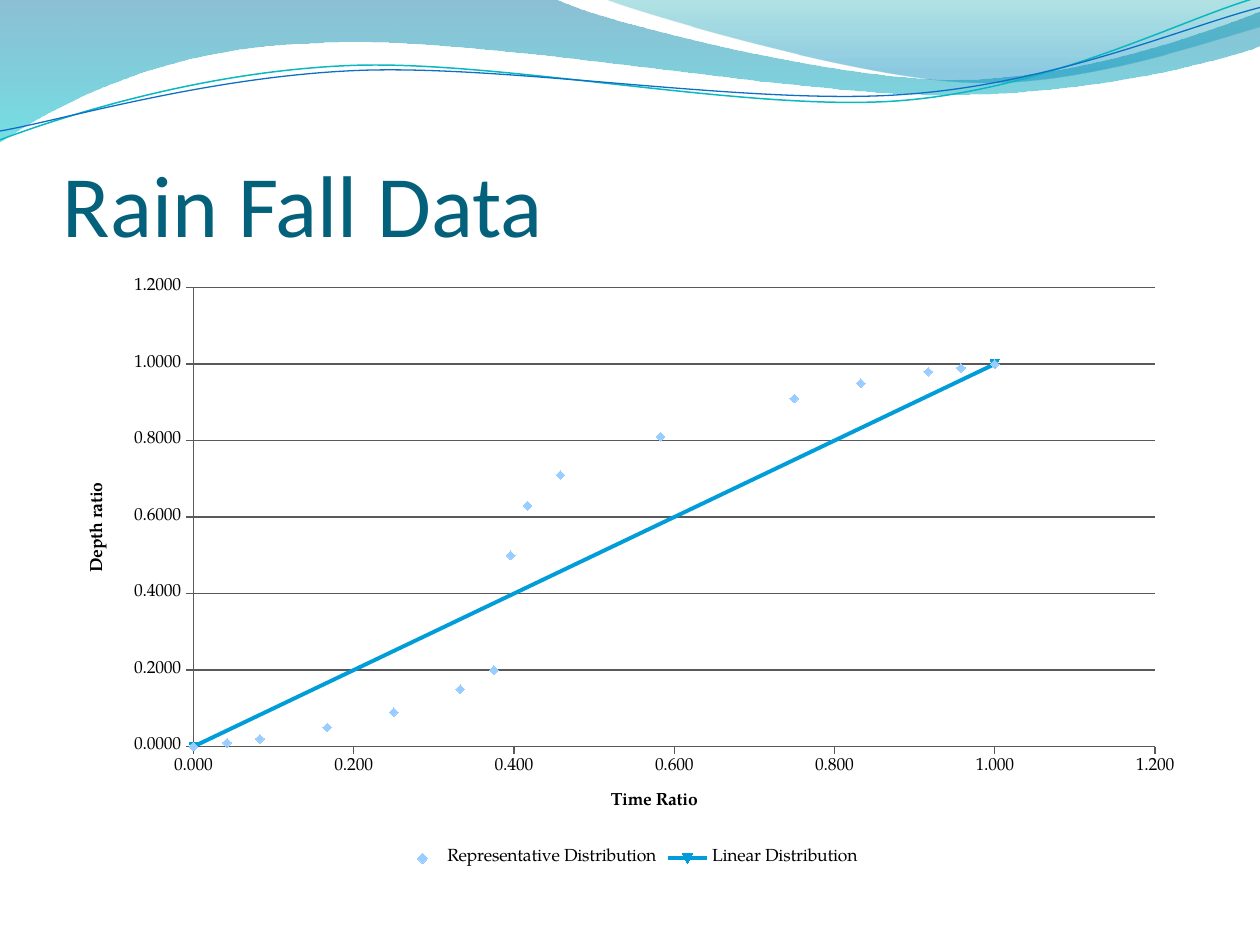
from math import cos, radians, sin

from lxml import etree
from pptx import Presentation
from pptx.chart.data import XyChartData
from pptx.dml.color import RGBColor
from pptx.enum.chart import XL_CHART_TYPE, XL_LEGEND_POSITION, XL_MARKER_STYLE, XL_TICK_MARK
from pptx.enum.text import MSO_ANCHOR
from pptx.oxml.ns import qn
from pptx.util import Inches, Pt

SCATTER = XL_CHART_TYPE.XY_SCATTER
LEGEND_BOTTOM = XL_LEGEND_POSITION.BOTTOM
DIAMOND, AUTOMATIC = XL_MARKER_STYLE.DIAMOND, XL_MARKER_STYLE.AUTOMATIC
TICK_OUTSIDE = XL_TICK_MARK.OUTSIDE
ANCHOR_BOTTOM = MSO_ANCHOR.BOTTOM
CHART_FONT = "TeX Gyre Pagella"
RIPPLE_TILT = 2.7


def rgb(hex_color):
    return RGBColor.from_string(hex_color)


def draw_outline(start, segments, close):
    """Draw segments of one point (line) or three points (cubic Bezier), in inches."""
    builder = slide.shapes.build_freeform(Inches(start[0]), Inches(start[1]))
    builder.add_line_segments(
        [(Inches(x), Inches(y)) for segment in segments for x, y in segment], close=close)
    outline = builder.convert_to_shape()
    outline.shadow.inherit = False
    # Join each run of three straight steps into one curve
    steps = iter(list(outline._element.iter(qn("a:lnTo"))))
    for segment in segments:
        parts = [next(steps) for _ in segment]
        if len(parts) == 3:
            curve = etree.Element(qn("a:cubicBezTo"))
            parts[0].addprevious(curve)
            for part in parts:
                curve.append(part[0])
                part.getparent().remove(part)
    return outline


prs = Presentation()
prs.slide_width, prs.slide_height = Inches(10), Inches(7.5)
slide = prs.slides.add_slide(prs.slide_layouts[6])

# Translucent waves: start, segments, gradient stops (position, colour, opacity %)
waves = [
    ((0, 0), [
        [(4.4, -0.01)],
        [(4.76, 0.17), (6.64, 0.63), (7.58, 0.63)],
        [(8.53, 0.63), (9.58, 0.26), (10, 0.09)],
        [(10.01, 0.36)],
        [(9.83, 0.44), (8.7, 0.76), (7.46, 0.75)],
        [(6.22, 0.75), (3.82, 0.28), (2.57, 0.34)],
        [(1.29, 0.36), (0.46, 0.83), (-0.01, 1.13)],
        [(0, 0)],
    ], [(0, "0074A1", 45), (1, "00C6CF", 55)]),
    ((4.79, -0.01), [
        [(5.09, 0.11), (6.82, 0.62), (7.69, 0.65)],
        [(8.56, 0.69), (9.61, 0.32), (10, 0.21)],
        [(10, 0)],
        [(4.79, -0.01)],
    ], [(0, "00A1A9", 30), (0.8, "008BBF", 45)]),
]
for start, segments, stops in waves:
    wave = draw_outline(start, segments, close=True)
    wave.line.fill.background()
    wave.fill.gradient()
    wave.fill.gradient_angle = 270
    for stop, (position, color, _) in zip(wave.fill.gradient_stops, stops):
        stop.position = position
        stop.color.rgb = rgb(color)
    color_nodes = wave._element.spPr.find(qn("a:gradFill")).iter(qn("a:srgbClr"))
    for node, (_, _, opacity) in zip(color_nodes, stops):
        etree.SubElement(node, qn("a:alpha"), val=str(opacity * 1000))

# Tilted thin lines: centre, start, segments, colour, width
ripples = [
    ((4.99, 0.57), (0, 1.11), [
        [(0.48, 0.93), (1.58, 0.57), (2.77, 0.52)],
        [(3.95, 0.47), (5.93, 0.89), (7.13, 0.8)],
        [(8.33, 0.71), (9.38, 0.15), (9.98, -0.02)],
    ], "0AB8BF", 0.85),
    ((5, 0.59), (0, 1.04), [
        [(0.47, 0.96), (1.64, 0.61), (2.83, 0.56)],
        [(4.03, 0.51), (5.97, 0.84), (7.17, 0.75)],
        [(8.36, 0.67), (9.41, 0.21), (10, 0.06)],
    ], "0F6FC6", 0.75),
]
cosine, sine = cos(radians(RIPPLE_TILT)), sin(radians(RIPPLE_TILT))
for (center_x, center_y), start, segments, color, width in ripples:
    level_start, *level_segments = [
        [(center_x + (x - center_x) * cosine - (y - center_y) * sine,
          center_y + (x - center_x) * sine + (y - center_y) * cosine) for x, y in segment]
        for segment in [[start], *segments]]
    ripple = draw_outline(level_start[0], level_segments, close=False)
    ripple.rotation = 360 - RIPPLE_TILT
    ripple.fill.background()
    ripple.line.color.rgb = rgb(color)
    ripple.line.width = Pt(width)

heading = slide.shapes.add_textbox(Inches(0.5), Inches(0.77), Inches(9), Inches(1.25)).text_frame
heading_format = {
    "word_wrap": True, "vertical_anchor": ANCHOR_BOTTOM, "margin_left": 0,
    "margin_right": 0, "margin_top": Inches(0.05), "margin_bottom": 0,
}
for attribute, value in heading_format.items():
    setattr(heading, attribute, value)
heading_run = heading.paragraphs[0].add_run()
heading_run.text = "Rain Fall Data"
heading_run.font.name = "Calibri"
heading_run.font.size = Pt(50)
heading_run.font.color.rgb = rgb("04617B")

hours = [0, 1, 2, 4, 6, 8, 9, 9.5, 10, 11, 14, 18, 20, 22, 23, 24]
time_ratios = [round(hour / 24, 3) for hour in hours]
depth_ratios = [0, 0.01, 0.02, 0.05, 0.09, 0.15, 0.2, 0.5,
                0.63, 0.71, 0.81, 0.91, 0.95, 0.98, 0.99, 1]
rainfall = XyChartData()
for name, points in (
    ("Representative Distribution", zip(time_ratios, depth_ratios)),
    ("Linear Distribution", [(0, 0), (1, 1)]),
):
    distribution = rainfall.add_series(name)
    for time_ratio, depth_ratio in points:
        distribution.add_data_point(time_ratio, depth_ratio)

chart = slide.shapes.add_chart(
    SCATTER, Inches(0.5), Inches(2.12), Inches(9), Inches(4.8), rainfall).chart
chart.has_title = False
chart.font.name = CHART_FONT
chart.font.size = Pt(10)
chart.font.color.rgb = rgb("000000")
chart.has_legend = True
chart.legend.position = LEGEND_BOTTOM
chart.legend.include_in_layout = False
chart.plots[0].vary_by_categories = False

for axis, title, number_format in (
    (chart.category_axis, "Time Ratio", "0.000"),
    (chart.value_axis, "Depth ratio", "0.0000"),
):
    axis.minimum_scale, axis.maximum_scale, axis.major_unit = 0, 1.2, 0.2
    axis.major_tick_mark = TICK_OUTSIDE
    axis.has_major_gridlines = axis is chart.value_axis
    axis.tick_labels.number_format = number_format
    axis.tick_labels.number_format_is_linked = False
    axis.format.line.color.rgb = rgb("595959")
    title_run = axis.axis_title.text_frame.paragraphs[0].add_run()
    title_run.text = title
    title_format = {"name": CHART_FONT, "size": Pt(10), "bold": True}
    for attribute, value in title_format.items():
        setattr(title_run.font, attribute, value)
    title_run.font.color.rgb = rgb("000000")
chart.value_axis.major_gridlines.format.line.color.rgb = rgb("595959")

representative, linear = chart.plots[0].series
for series, style, color in (
    (representative, DIAMOND, "99CCFF"), (linear, AUTOMATIC, "009DD9"),
):
    series.smooth = False
    series.marker.style = style
    series.marker.size = 5
    series.marker.format.fill.solid()
    series.marker.format.fill.fore_color.rgb = rgb(color)
    series.marker.format.line.color.rgb = rgb(color)
representative.format.line.fill.background()
linear.format.line.color.rgb = rgb("009DD9")
linear.format.line.width = Pt(2.25)

# Fixed position of the plot inside the chart
plot_area = chart._chartSpace.find(qn("c:chart")).find(qn("c:plotArea"))
layout = plot_area.find(qn("c:layout"))
if layout is None:
    layout = etree.Element(qn("c:layout"))
    plot_area.insert(0, layout)
manual = etree.SubElement(layout, qn("c:manualLayout"))
for tag, value in (
    ("layoutTarget", "inner"), ("xMode", "edge"), ("yMode", "edge"),
    ("x", "0.115"), ("y", "0.034"), ("w", "0.848"), ("h", "0.759"),
):
    etree.SubElement(manual, qn("c:" + tag), val=value)

prs.save("out.pptx")
